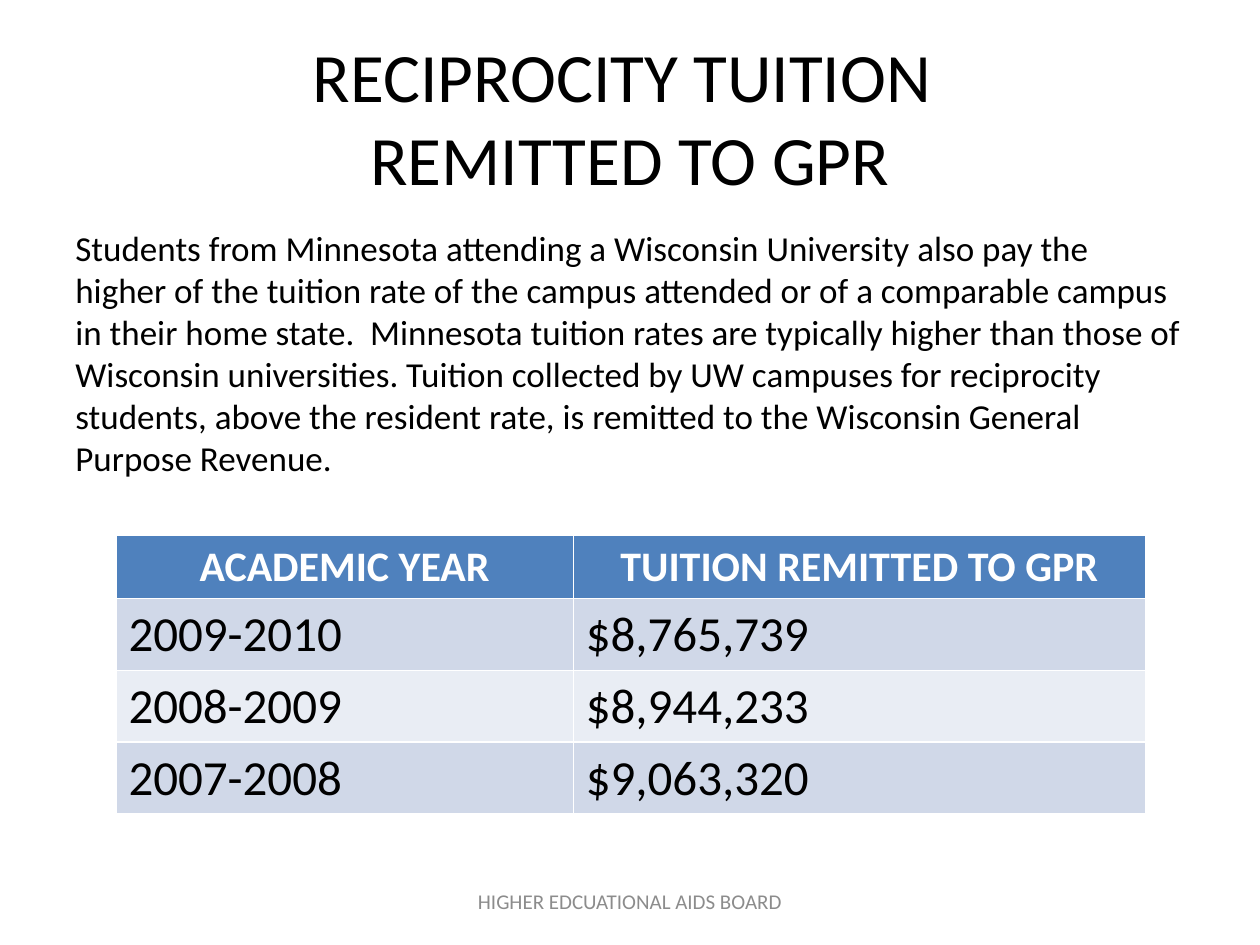
from dataclasses import dataclass

from pptx import Presentation
from pptx.dml.color import RGBColor
from pptx.enum.text import MSO_ANCHOR, PP_ALIGN
from pptx.util import Inches, Pt

SLIDE_W, SLIDE_H = 10, 7.5
FONT = "Calibri"
COLORS = {
    "text": "000000",
    "footer": "8C8C8C",
    "header_text": "FFFFFF",
    "header": "4F81BD",
    "band_dark": "D0D8E8",
    "band_light": "E9EDF4",
}


@dataclass
class TextBlock:
    text: str
    left: float  # left and width are shares of the slide's width
    top: float  # top and height are shares of its height
    width: float
    height: float
    size: float
    color: str = "text"
    align: PP_ALIGN = PP_ALIGN.CENTER
    anchor: MSO_ANCHOR = MSO_ANCHOR.MIDDLE


@dataclass
class TableRow:
    cells: tuple[str, ...]
    height: float
    size: float
    fill: str
    color: str = "text"
    align: PP_ALIGN = PP_ALIGN.LEFT
    bold: bool = False


def style_text(tf, size: float, color: str, align: PP_ALIGN, bold: bool = False) -> None:
    for p in tf.paragraphs:
        p.alignment = align
        for r in p.runs:
            r.font.name = FONT
            r.font.size = Pt(size)
            r.font.bold = bold
            r.font.color.rgb = RGBColor.from_string(COLORS[color])


def add_text(s, block: TextBlock) -> None:
    sp = s.shapes.add_textbox(
        Inches(block.left * SLIDE_W), Inches(block.top * SLIDE_H),
        Inches(block.width * SLIDE_W), Inches(block.height * SLIDE_H))
    tf = sp.text_frame
    tf.word_wrap = True
    tf.vertical_anchor = block.anchor
    tf.text = block.text
    style_text(tf, block.size, block.color, block.align)


def add_tuition_table(s, left: float, top: float, widths: list[float],
                      rows: list[TableRow]) -> None:
    table = s.shapes.add_table(
        len(rows), len(widths), Inches(left), Inches(top),
        Inches(sum(widths)), Inches(sum(row.height for row in rows))).table
    for column, width in zip(table.columns, widths):
        column.width = Inches(width)
    for i, row in enumerate(rows):
        table.rows[i].height = Inches(row.height)
        for cell, text in zip(table.rows[i].cells, row.cells):
            cell.text_frame.text = text
            cell.fill.solid()
            cell.fill.fore_color.rgb = RGBColor.from_string(COLORS[row.fill])
            style_text(cell.text_frame, row.size, row.color, row.align, row.bold)


TEXTS = [
    TextBlock("RECIPROCITY TUITION \vREMITTED TO GPR", 0.05, 0.04, 0.9, 1 / 6, 39.6),
    TextBlock(
        "Students from Minnesota attending a Wisconsin University also pay the "
        "higher of the tuition rate of the campus attended or of a comparable "
        "campus in their home state.  Minnesota tuition rates are typically higher "
        "than those of Wisconsin universities. Tuition collected by UW campuses for "
        "reciprocity students, above the resident rate, is remitted to the "
        "Wisconsin General Purpose Revenue.",
        0.05, 1.75 / SLIDE_H, 0.9, 0.66, 20,
        align=PP_ALIGN.LEFT, anchor=MSO_ANCHOR.TOP),
    TextBlock("HIGHER EDCUATIONAL AIDS BOARD", 0.34, 6.95 / SLIDE_H, 0.32,
              0.4 / SLIDE_H, 12, "footer"),
]

REMITTED = [
    ("2009-2010", "$8,765,739"),
    ("2008-2009", "$8,944,233"),
    ("2007-2008", "$9,063,320"),
]


def main() -> None:
    prs = Presentation()
    prs.slide_width, prs.slide_height = Inches(SLIDE_W), Inches(SLIDE_H)
    s = prs.slides.add_slide(prs.slide_layouts[6])

    # Title, explanation and footer
    for block in TEXTS:
        add_text(s, block)

    # Tuition by academic year, in alternating bands
    header = TableRow(("ACADEMIC YEAR", "TUITION REMITTED TO GPR"), 0.5, 24,
                      "header", "header_text", PP_ALIGN.CENTER, True)
    bands = ("band_dark", "band_light")
    years = [TableRow(cells, 0.57, 28, bands[i % 2])
             for i, cells in enumerate(REMITTED)]
    add_tuition_table(s, 0.92, 4.25, [3.63, 4.54], [header, *years])

    prs.save("out.pptx")


if __name__ == "__main__":
    main()
